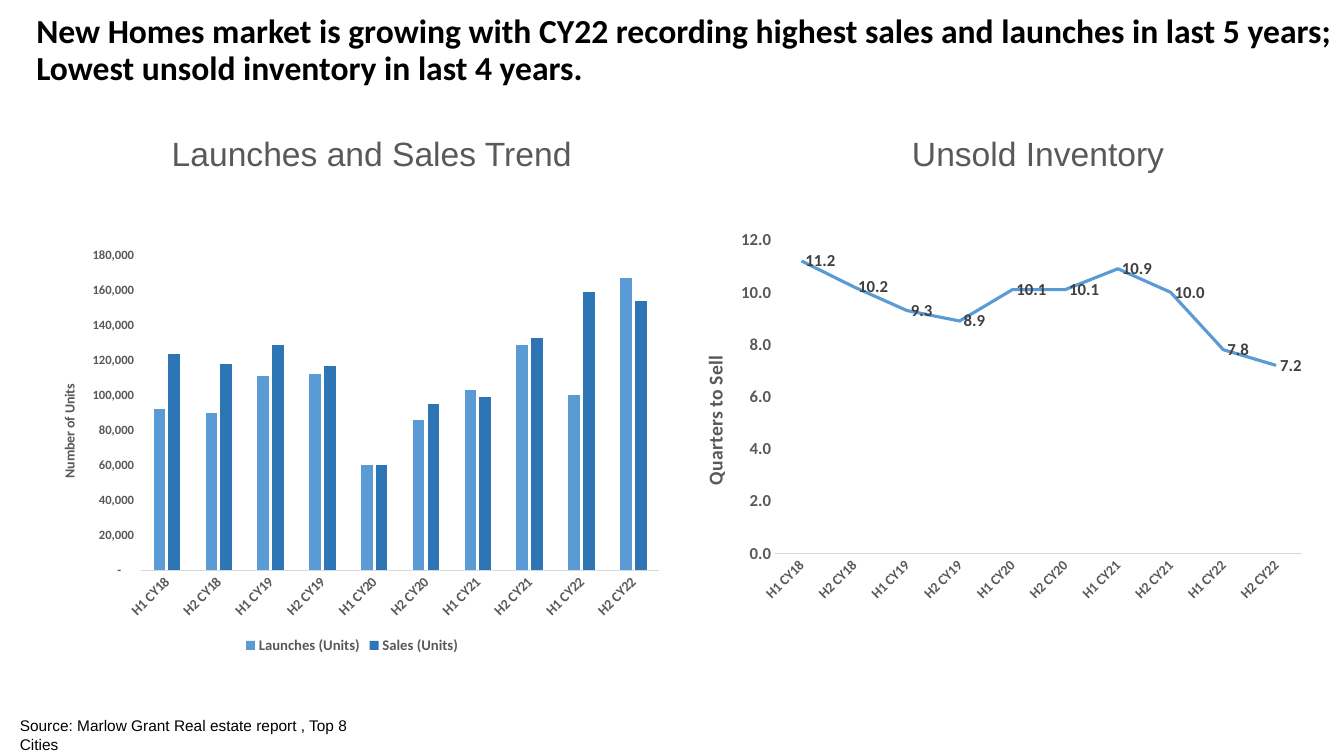
import pptx
import pptx.chart.data
import pptx.dml.color
import pptx.enum.chart
import pptx.enum.text
import pptx.oxml
import pptx.oxml.ns
import pptx.util
from pptx.util import Cm, Pt

BLACK = pptx.dml.color.RGBColor(0x00, 0x00, 0x00)
GREY = pptx.dml.color.RGBColor(0x59, 0x59, 0x59)
DARK_GREY = pptx.dml.color.RGBColor(0x40, 0x40, 0x40)
AXIS_GREY = pptx.dml.color.RGBColor(0xD9, 0xD9, 0xD9)
LIGHT_BLUE = pptx.dml.color.RGBColor(0x5B, 0x9B, 0xD5)
BLUE = pptx.dml.color.RGBColor(0x2E, 0x75, 0xB6)

HALF_YEARS = [f"H{half} CY{year}" for year in range(18, 23) for half in (1, 2)]
LAUNCHES = [92000, 90000, 111000, 112000, 60000, 86000, 103000, 129000, 100000, 167000]
SALES = [124000, 118000, 129000, 117000, 60000, 95000, 99000, 133000, 159000, 154000]
QUARTERS_TO_SELL = [11.2, 10.2, 9.3, 8.9, 10.1, 10.1, 10.9, 10, 7.8, 7.2]
UNITS_FORMAT = '_ * #,##0_ ;_ * \\-#,##0_ ;_ * "-"??_ ;_ '
QUARTERS_FORMAT = "#,##0.0"


def style_font(font, name, size, color, bold=False):
    font.name = name
    font.size = Pt(size)
    font.bold = bold
    font.color.rgb = color


def set_layout(parent, position, **fractions):
    for automatic in parent.findall(pptx.oxml.ns.qn("c:layout")):
        parent.remove(automatic)
    target = '<c:layoutTarget val="inner"/>' if "w" in fractions else ""
    modes = "".join(f'<c:{key}Mode val="edge"/>' for key in ("x", "y"))
    values = "".join(f'<c:{key} val="{value}"/>' for key, value in fractions.items())
    parent.insert(position, pptx.oxml.parse_xml(
        f'<c:layout {pptx.oxml.ns.nsdecls("c")}><c:manualLayout>'
        f"{target}{modes}{values}</c:manualLayout></c:layout>"))


deck = pptx.Presentation()
deck.slide_width, deck.slide_height = Cm(33.87), Cm(19.05)
slide = deck.slides.add_slide(deck.slide_layouts[5])

headline = slide.shapes.title
headline.left, headline.top, headline.width, headline.height = Cm(0.66), Cm(0.08), Cm(33.4), Cm(2.41)
headline.text_frame.auto_size = pptx.enum.text.MSO_AUTO_SIZE.NONE
headline.text_frame.vertical_anchor = pptx.enum.text.MSO_ANCHOR.MIDDLE
headline_line = headline.text_frame.paragraphs[0]
headline_line.alignment = pptx.enum.text.PP_ALIGN.LEFT
headline_line.line_spacing = 0.9
headline_run = headline_line.add_run()
headline_run.text = ("New Homes market is growing with CY22 recording highest sales and launches "
                     "in last 5 years; Lowest unsold inventory in last 4 years.")
style_font(headline_run.font, "Calibri", 24, BLACK, True)

CENTER, LEFT = pptx.enum.text.PP_ALIGN.CENTER, pptx.enum.text.PP_ALIGN.LEFT
for wording, left, top, width, height, size, color, alignment in (
    ("Launches and Sales Trend", 3.56, 3.23, 11.61, 1.27, 24, GREY, CENTER),
    ("Unsold Inventory", 21.79, 3.23, 8.74, 1.27, 24, GREY, CENTER),
    ("Source: Marlow Grant Real estate report , Top 8 Cities", 0.25, 17.93, 9.83, 0.74, 11, BLACK, LEFT),
):
    caption = slide.shapes.add_textbox(Cm(left), Cm(top), Cm(width), Cm(height)).text_frame
    caption.word_wrap = alignment == CENTER
    caption.auto_size = pptx.enum.text.MSO_AUTO_SIZE.SHAPE_TO_FIT_TEXT
    caption.paragraphs[0].alignment = alignment
    caption_run = caption.paragraphs[0].add_run()
    caption_run.text = wording
    style_font(caption_run.font, "Arial", size, color)

units = pptx.chart.data.CategoryChartData(number_format="#,##0")
units.categories = HALF_YEARS
units.add_series("Launches (Units)", LAUNCHES)
units.add_series("Sales (Units)", SALES)
trend = slide.shapes.add_chart(
    pptx.enum.chart.XL_CHART_TYPE.COLUMN_CLUSTERED,
    Cm(0.81), Cm(6.02), Cm(16.13), Cm(10.57), units).chart

quarters = pptx.chart.data.CategoryChartData(number_format=QUARTERS_FORMAT)
quarters.categories = HALF_YEARS
quarters.add_series("Series 1", QUARTERS_TO_SELL)
inventory = slide.shapes.add_chart(
    pptx.enum.chart.XL_CHART_TYPE.LINE,
    Cm(16.94), Cm(5.66), Cm(16.21), Cm(9.75), quarters).chart

for chart, axis_title, title_size, tick_size, number_format, top_value, step, title_at, plot_at in (
    (trend, "Number of Units", 10, 9, UNITS_FORMAT, 180000, 20000,
     dict(x=0.04, y=0.34), dict(x=0.17, y=0.04, w=0.81, h=0.75)),
    (inventory, "Quarters to Sell", 14, 12, QUARTERS_FORMAT, 12, 2,
     dict(x=0.04, y=0.33), dict(x=0.16, y=0.04, w=0.82, h=0.81)),
):
    chart.has_title = False
    chart.has_legend = False
    style_font(chart.font, "Calibri", 10, BLACK)
    chart.plots[0].vary_by_categories = False
    set_layout(chart._chartSpace.chart.plotArea, 0, **plot_at)

    periods = chart.category_axis
    periods.major_tick_mark = pptx.enum.chart.XL_TICK_MARK.NONE
    periods.format.line.color.rgb = AXIS_GREY
    periods.format.line.width = Pt(0.75)
    style_font(periods.tick_labels.font, "Calibri", 10, GREY, True)
    periods._element.find(pptx.oxml.ns.qn("c:txPr")).bodyPr.set("rot", "-2700000")

    scale = chart.value_axis
    scale.minimum_scale, scale.maximum_scale, scale.major_unit = 0, top_value, step
    scale.has_major_gridlines = False
    scale.major_tick_mark = pptx.enum.chart.XL_TICK_MARK.NONE
    scale.format.line.fill.background()
    scale.tick_labels.number_format = number_format
    scale.tick_labels.number_format_is_linked = False
    style_font(scale.tick_labels.font, "Calibri", tick_size, GREY, True)
    scale_title = scale.axis_title.text_frame
    scale_title._txBody.bodyPr.set("rot", "-5400000")
    scale_title._txBody.bodyPr.set("vert", "horz")
    scale_run = scale_title.paragraphs[0].add_run()
    scale_run.text = axis_title
    style_font(scale_run.font, "Calibri", title_size, GREY, True)
    set_layout(scale.axis_title._element, 1, **title_at)

trend.plots[0].gap_width = 219
trend.plots[0].overlap = -27
for columns, color in zip(trend.plots[0].series, (LIGHT_BLUE, BLUE)):
    columns.format.fill.solid()
    columns.format.fill.fore_color.rgb = color
trend.has_legend = True
trend.legend.position = pptx.enum.chart.XL_LEGEND_POSITION.BOTTOM
trend.legend.include_in_layout = False
style_font(trend.legend.font, "Calibri", 10.5, GREY, True)

unsold = inventory.plots[0].series[0]
unsold.smooth = False
unsold.format.line.color.rgb = LIGHT_BLUE
unsold.format.line.width = Pt(2.25)
unsold.data_labels.show_value = True
unsold.data_labels.number_format = QUARTERS_FORMAT
unsold.data_labels.number_format_is_linked = False
unsold.data_labels.position = pptx.enum.chart.XL_LABEL_POSITION.RIGHT
style_font(unsold.data_labels.font, "Calibri", 12, DARK_GREY, True)

deck.save("out.pptx")
